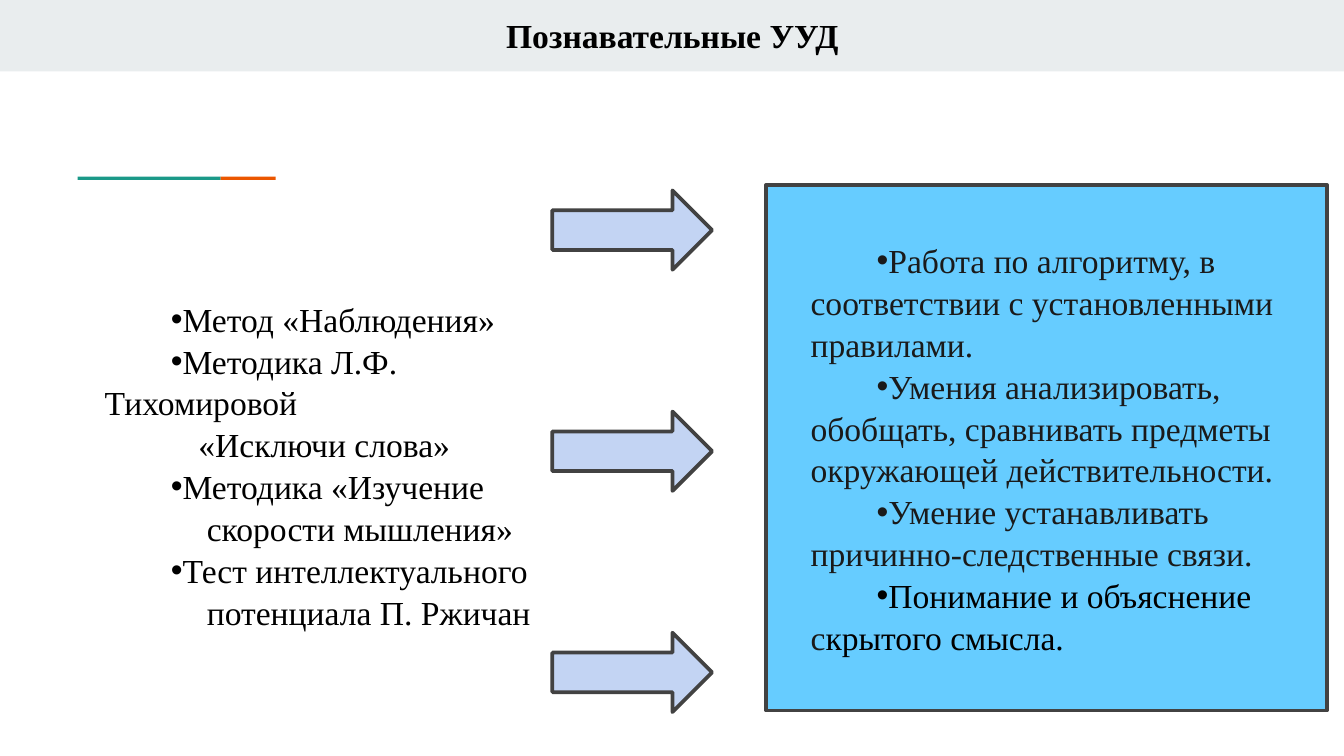
from lxml.etree import SubElement
from pptx import Presentation
from pptx.dml.color import RGBColor
from pptx.enum.shapes import MSO_SHAPE as Shape
from pptx.enum.text import MSO_ANCHOR as Anchor, PP_ALIGN as Align
from pptx.oxml.ns import qn
from pptx.util import Cm, Pt

# Content
COLORS = {
    "band": "E9EDEE", "orange": "EB5600", "teal": "1A9988", "box": "66CCFF",
    "arrow": "C3D4F3", "outline": "424242", "black": "000000", "dark": "1A1A1A",
}
FONT = "Times New Roman"
TITLE = "Познавательные УУД"

# Methods: text and first-line indent in cm of a continuation line (None: bulleted)
METHODS = [
    ("Метод «Наблюдения»", None),
    ("Методика Л.Ф. Тихомировой", None),
    ("«Исключи слова»", 2.36),
    ("Методика «Изучение", None),
    ("скорости мышления»", 2.52),
    ("Тест интеллектуального", None),
    ("потенциала П. Ржичан", 2.52),
]
# Results: runs of text and colour
RESULTS = [
    [("Работа по алгоритму, в соответствии с установленными правилами.", "dark")],
    [("Умения анализировать, обобщать, сравнивать предметы окружающей действительности.", "dark")],
    [("Умение устанавливать причинно-следственные связи.", "dark")],
    [("Понимание и объяснение", "black"), (" с", "dark"), ("крытого смысла.", "black")],
]

# Layout in cm
BULLET_MARGIN, BULLET_INDENT = 0.59, 1.25
ACCENTS = [("teal", 1.47, 2.7), ("orange", 4.17, 1.04)]
ARROW_LEFT, ARROW_TOP, ARROW_STEP, ARROW_COUNT = 10.44, 3.6, 4.18, 3


def add_block(slide, kind, left, top, width, height, fill, outline=None):
    shape = slide.shapes.add_shape(kind, Cm(left), Cm(top), Cm(width), Cm(height))
    shape.shadow.inherit = False
    shape.fill.solid()
    shape.fill.fore_color.rgb = RGBColor.from_string(COLORS[fill])
    if outline:
        shape.line.color.rgb = RGBColor.from_string(COLORS[outline])
        shape.line.width = Pt(2)
    else:
        shape.line.fill.background()
    return shape


def add_text_box(slide, left, top, width, height):
    text_frame = slide.shapes.add_textbox(Cm(left), Cm(top), Cm(width), Cm(height)).text_frame
    text_frame.word_wrap = True
    return text_frame


def format_run(run, color, bold=False):
    run.font.name = FONT
    run.font.size = Pt(18)
    run.font.bold = bold
    run.font.color.rgb = RGBColor.from_string(COLORS[color])


def set_indent(paragraph, margin, indent, bullet):
    properties = paragraph._p.get_or_add_pPr()
    properties.set("marL", str(Cm(margin)))
    properties.set("indent", str(Cm(indent)))
    if bullet:
        SubElement(properties, qn("a:buFont")).set("typeface", "Arial")
        SubElement(properties, qn("a:buChar")).set("char", "•")
    else:
        SubElement(properties, qn("a:buNone"))


def write_list(text_frame, items):
    """Write items given as (runs, continuation indent or None)."""
    text_frame.text = "\n".join("" for _ in items)
    for paragraph, (runs, indent) in zip(text_frame.paragraphs, items):
        paragraph.alignment = Align.LEFT
        paragraph.line_spacing = 1.04
        for text, color in runs:
            run = paragraph.add_run()
            run.text = text
            format_run(run, color)
        if indent is None:
            set_indent(paragraph, BULLET_MARGIN, BULLET_INDENT, True)
        else:
            set_indent(paragraph, 0, indent, False)


def main():
    presentation = Presentation()
    presentation.slide_width, presentation.slide_height = Cm(25.4), Cm(14.29)
    slide = presentation.slides.add_slide(presentation.slide_layouts[6])

    # Header band and accent line
    add_block(slide, Shape.RECTANGLE, 0, 0, 25.4, 1.35, "band")
    for color, left, width in ACCENTS:
        add_block(slide, Shape.RECTANGLE, left, 3.34, width, 0.06, color)

    # Title
    title = add_text_box(slide, 2.03, 0, 21.36, 1.5)
    title.margin_top = title.margin_bottom = Cm(0.28)
    title.text = TITLE
    title.paragraphs[0].alignment = Align.CENTER
    format_run(title.paragraphs[0].runs[0], "black", bold=True)

    # Results box
    box = add_block(slide, Shape.RECTANGLE, 14.48, 3.5, 10.6, 9.93, "box", "outline")
    box.text_frame.word_wrap = True
    box.text_frame.vertical_anchor = Anchor.MIDDLE
    write_list(box.text_frame, [(runs, None) for runs in RESULTS])

    # Arrows
    for row in range(ARROW_COUNT):
        add_block(slide, Shape.RIGHT_ARROW, ARROW_LEFT, ARROW_TOP + row * ARROW_STEP,
                  3.02, 1.5, "arrow", "outline")

    # Methods
    methods = add_text_box(slide, 1.14, 5.49, 9.75, 6.4)
    write_list(methods, [([(text, "black")], indent) for text, indent in METHODS])

    presentation.save("out.pptx")


if __name__ == "__main__":
    main()
